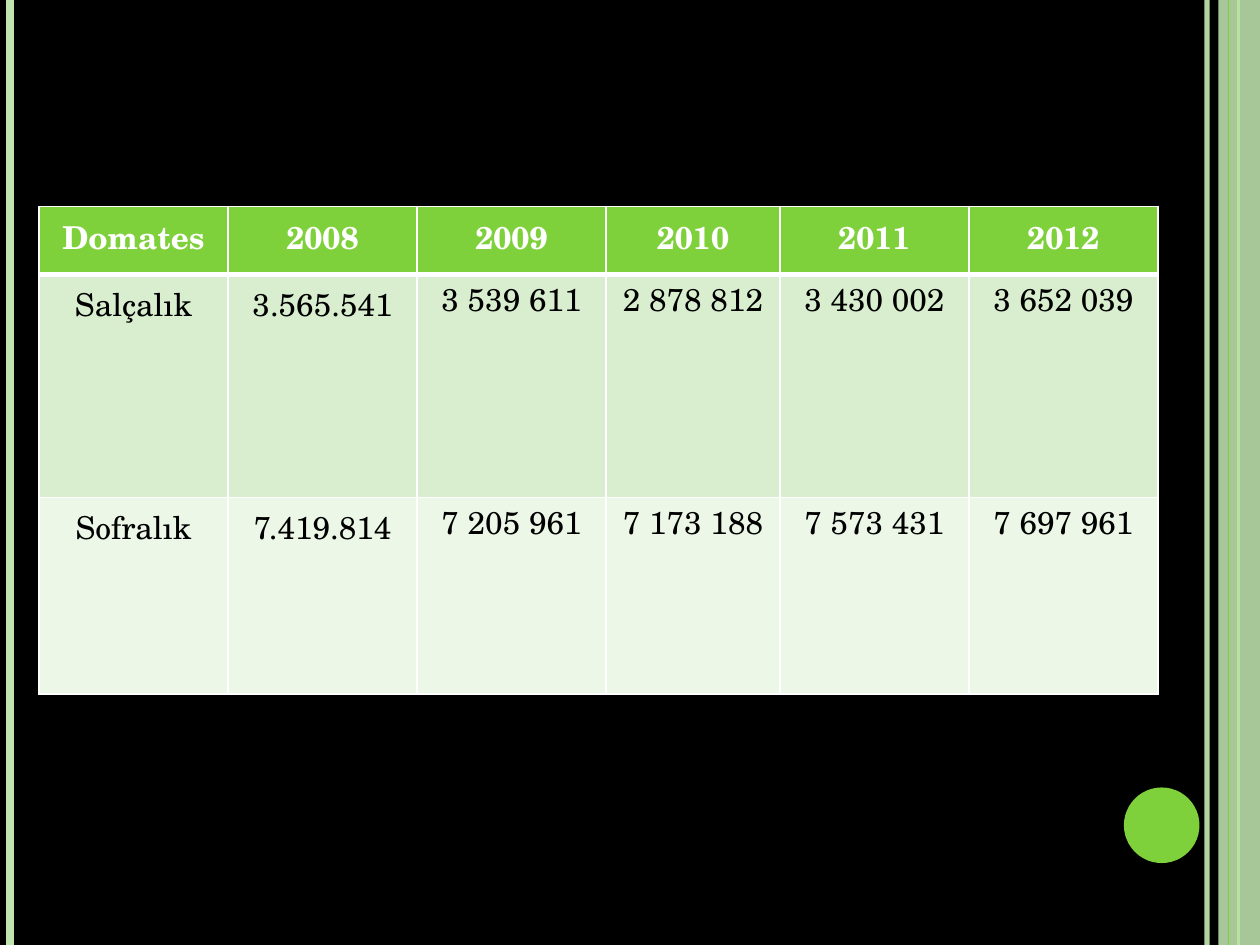
"""Build a slide with a table of tomato production by year."""
import dataclasses

import lxml.etree
import pptx
import pptx.dml.color
import pptx.dml.fill
import pptx.enum.shapes
import pptx.enum.text
import pptx.oxml.ns
import pptx.slide
import pptx.table
import pptx.util

Inches = pptx.util.Inches
qn = pptx.oxml.ns.qn

FONT = "TeX Gyre Schola"
GREEN = "7FD13B"
PALE_GREEN = "C0E5AF"
WHITE = "FFFFFF"
BLACK = "000000"
PAGE_HEIGHT = 7.5


@dataclasses.dataclass(frozen=True)
class Stripe:
    x: float
    color: str
    points: float
    opacity: int = 100


@dataclasses.dataclass(frozen=True)
class Panel:
    kind: pptx.enum.shapes.MSO_SHAPE
    left: float
    top: float
    width: float
    height: float
    color: str
    opacity: int = 100


@dataclasses.dataclass(frozen=True)
class Row:
    height: float
    fill: str
    texts: tuple[str, ...]
    color: str = BLACK
    bold: bool = False
    top_border: float = 1
    bottom_border: float = 1
    tight_from: int = 2


DECORATIONS = (
    Stripe(9.58, PALE_GREEN, 3, 93),
    Stripe(0.08, PALE_GREEN, 4.5),
    Stripe(9.83, GREEN, 1.5),
    Panel(pptx.enum.shapes.MSO_SHAPE.RECTANGLE, 9.67, 0, 0.33, PAGE_HEIGHT, PALE_GREEN, 87),
    Stripe(9.75, GREEN, 0.75),
    Panel(pptx.enum.shapes.MSO_SHAPE.OVAL, 8.92, 6.25, 0.6, 0.6, GREEN),
)
COLUMN_WIDTHS = (1.5, 1.5, 1.5, 1.38, 1.5, 1.5)
ROWS = (
    Row(0.54, GREEN, ("Domates", "2008", "2009", "2010", "2011", "2012"),
        color=WHITE, bold=True, bottom_border=3, tight_from=6),
    Row(1.77, "D8EECE",
        ("Salçalık", "3.565.541", "3 539 611", "2 878 812", "3 430 002", "3 652 039"),
        top_border=3),
    Row(1.56, "ECF7E8",
        ("Sofralık", "7.419.814", "7 205 961", "7 173 188", "7 573 431", "7 697 961")),
)


def rgb(color: str) -> pptx.dml.color.RGBColor:
    return pptx.dml.color.RGBColor.from_string(color)


def paint(fill: pptx.dml.fill.FillFormat, color: str) -> None:
    fill.solid()
    fill.fore_color.rgb = rgb(color)


def set_opacity(properties: lxml.etree.ElementBase, percent: int) -> None:
    if percent < 100:
        for color in properties.iter(qn("a:srgbClr")):
            lxml.etree.SubElement(color, qn("a:alpha"), val=str(percent * 1000))


def draw_stripe(page: pptx.slide.Slide, stripe: Stripe) -> None:
    x = Inches(stripe.x)
    line = page.shapes.add_connector(
        pptx.enum.shapes.MSO_CONNECTOR.STRAIGHT, x, 0, x, Inches(PAGE_HEIGHT))
    line.line.width = pptx.util.Pt(stripe.points)
    paint(line.line.fill, stripe.color)
    properties = line.element.spPr
    set_opacity(properties, stripe.opacity)
    lxml.etree.SubElement(properties, qn("a:effectLst"))


def draw_panel(page: pptx.slide.Slide, panel: Panel) -> None:
    shape = page.shapes.add_shape(
        panel.kind, Inches(panel.left), Inches(panel.top),
        Inches(panel.width), Inches(panel.height))
    shape.shadow.inherit = False
    shape.line.fill.background()
    paint(shape.fill, panel.color)
    set_opacity(shape.element.spPr, panel.opacity)


def set_borders(cell: pptx.table._Cell, top: float, bottom: float) -> None:
    properties = cell._tc.get_or_add_tcPr()
    for side, points in (("L", 1), ("R", 1), ("T", top), ("B", bottom)):
        border = lxml.etree.SubElement(
            properties, qn(f"a:ln{side}"), w=str(pptx.util.Pt(points)))
        solid = lxml.etree.SubElement(border, qn("a:solidFill"))
        lxml.etree.SubElement(solid, qn("a:srgbClr"), val=WHITE)


def write_text(cell: pptx.table._Cell, text: str, *, color: str, bold: bool,
               size: float = 18) -> None:
    para = cell.text_frame.paragraphs[0]
    para.alignment = pptx.enum.text.PP_ALIGN.CENTER
    span = para.add_run()
    span.text = text
    span.font.name = FONT
    span.font.size = pptx.util.Pt(size)
    span.font.bold = bold
    span.font.color.rgb = rgb(color)


def draw_table(page: pptx.slide.Slide, left: float, top: float) -> None:
    table = page.shapes.add_table(
        len(ROWS), len(COLUMN_WIDTHS), Inches(left), Inches(top),
        Inches(sum(COLUMN_WIDTHS)), Inches(sum(row.height for row in ROWS))).table
    for column, width in zip(table.columns, COLUMN_WIDTHS):
        column.width = Inches(width)
    for row_index, row in enumerate(ROWS):
        table.rows[row_index].height = Inches(row.height)
        for column_index, text in enumerate(row.texts):
            cell = table.cell(row_index, column_index)
            set_borders(cell, row.top_border, row.bottom_border)
            paint(cell.fill, row.fill)
            write_text(cell, text, color=row.color, bold=row.bold)
            if column_index >= row.tight_from:
                cell.margin_left = cell.margin_top = cell.margin_right = Inches(0.01)
                cell.margin_bottom = 0


def main() -> None:
    deck = pptx.Presentation()
    deck.slide_width = Inches(10)
    deck.slide_height = Inches(PAGE_HEIGHT)
    page = deck.slides.add_slide(deck.slide_layouts.get_by_name("Blank"))
    paint(page.background.fill, BLACK)
    for item in DECORATIONS:
        if isinstance(item, Stripe):
            draw_stripe(page, item)
        else:
            draw_panel(page, item)
    draw_table(page, left=0.31, top=1.64)
    deck.save("out.pptx")


if __name__ == "__main__":
    main()
